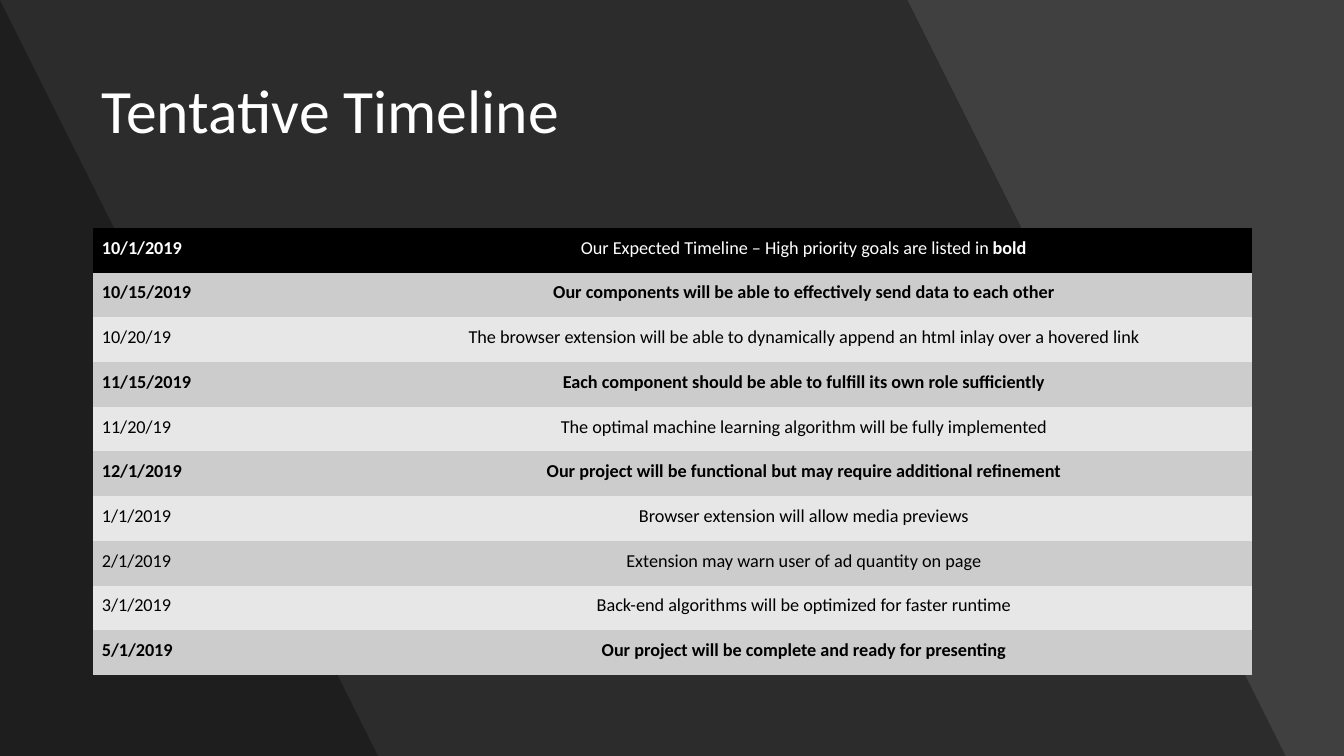
from lxml import etree
from pptx import Presentation
from pptx.dml.color import RGBColor
from pptx.enum.text import MSO_ANCHOR, PP_ALIGN
from pptx.oxml.ns import qn
from pptx.util import Inches, Pt

MIDDLE = MSO_ANCHOR.MIDDLE
LEFT, CENTER = PP_ALIGN.LEFT, PP_ALIGN.CENTER
WIDTH, HEIGHT = 13.33, 7.5

HEAD = [("Our Expected Timeline – High priority goals are listed in ", False),
        ("bold", True)]
GOALS = [
    ("10/15/2019", "Our components will be able to effectively send data to each other", True),
    ("10/20/19", "The browser extension will be able to dynamically append an html inlay "
                 "over a hovered link", False),
    ("11/15/2019", "Each component should be able to fulfill its own role sufficiently", True),
    ("11/20/19", "The optimal machine learning algorithm will be fully implemented", False),
    ("12/1/2019", "Our project will be functional but may require additional refinement", True),
    ("1/1/2019", "Browser extension will allow media previews", False),
    ("2/1/2019", "Extension may warn user of ad quantity on page", False),
    ("3/1/2019", "Back-end algorithms will be optimized for faster runtime", False),
    ("5/1/2019", "Our project will be complete and ready for presenting", True),
]


def color(code):
    return RGBColor.from_string(code)


class Deck:
    font = "Calibri"
    dark, light = "000000", "FFFFFF"
    bands = ("CCCCCC", "E7E7E7")

    def __init__(self, back):
        self.file = Presentation()
        self.file.slide_width = Inches(WIDTH)
        self.file.slide_height = Inches(HEIGHT)
        self.slide = self.file.slides.add_slide(self.file.slide_layouts[6])
        self.paint(self.slide.background.fill, back)

    def paint(self, fill, code):
        fill.solid()
        fill.fore_color.rgb = color(code)

    def style(self, para, size, code):
        para.font.name = self.font
        para.font.size = Pt(size)
        para.font.color.rgb = color(code)

    def panel(self, top, base, alpha):
        pen = self.slide.shapes.build_freeform(0, 0, scale=Inches(1))
        pen.add_line_segments([(top, 0), (base, HEIGHT), (0, HEIGHT)])
        shape = pen.convert_to_shape()
        shape.shadow.inherit = False
        shape.line.fill.background()
        self.paint(shape.fill, self.dark)
        tint = shape.fill._xPr.find(qn("a:solidFill"))[0]
        etree.SubElement(tint, qn("a:alpha"), val=str(alpha * 1000))

    def title(self, text, left, top, width, height):
        box = self.slide.shapes.add_textbox(
            Inches(left), Inches(top), Inches(width), Inches(height))
        frame = box.text_frame
        frame.word_wrap = True
        frame.vertical_anchor = MIDDLE
        para = frame.paragraphs[0]
        para.text = text
        para.line_spacing = 0.9
        self.style(para, 44, self.light)

    def cell(self, cell, runs, align, code, fill):
        cell.margin_left = cell.margin_right = Inches(0.09)
        cell.margin_top = cell.margin_bottom = Inches(0.09)
        props = cell._tc.get_or_add_tcPr()
        for side in ("lnL", "lnR", "lnT", "lnB"):
            edge = etree.SubElement(props, qn(f"a:{side}"), w="0")
            etree.SubElement(edge, qn("a:noFill"))
        self.paint(cell.fill, fill)
        para = cell.text_frame.paragraphs[0]
        para.alignment = align
        for text, bold in runs:
            run = para.add_run()
            run.text = text
            run.font.bold = bold
        self.style(para, 13, code)

    def table(self, rows, left, top, widths, height):
        table = self.slide.shapes.add_table(
            len(rows), len(widths), Inches(left), Inches(top),
            Inches(sum(widths)), Inches(height)).table
        table.first_row = table.horz_banding = False
        for col, width in zip(table.columns, widths):
            col.width = Inches(width)
        for i, row in enumerate(rows):
            code = self.dark if i else self.light
            fill = self.bands[(i - 1) % 2] if i else self.dark
            for j, runs in enumerate(row):
                self.cell(table.cell(i, j), runs, CENTER if j else LEFT, code, fill)


def main():
    deck = Deck("404040")
    deck.panel(9.42, 12.89, 30)
    deck.panel(0.44, 3.92, 30)
    deck.title("Tentative Timeline", 0.91, 0.4, 11.51, 1.45)
    rows = [([("10/1/2019", True)], HEAD)]
    rows += [([(date, bold)], [(goal, bold)]) for date, goal, bold in GOALS]
    deck.table(rows, 0.92, 2.26, (2.6, 8.9), 4.44)
    deck.file.save("out.pptx")


if __name__ == "__main__":
    main()
